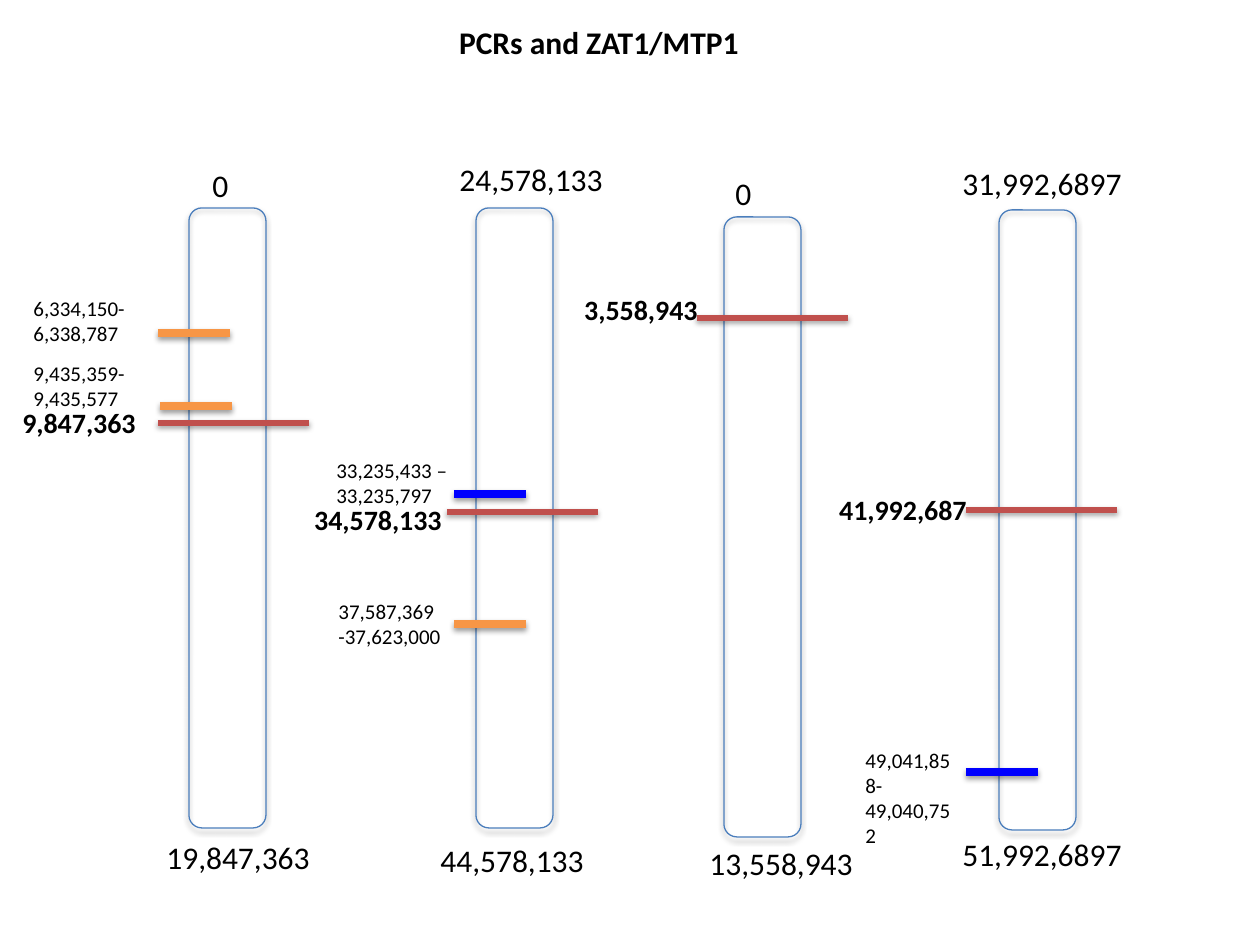
from lxml import etree
from pptx import Presentation
from pptx import util as u
from pptx.dml.color import RGBColor
from pptx.enum import shapes, text
from pptx.oxml import ns

COLORS = {
    "ink": "000000",
    "outline": "4B7EBC",
    "centre": "C0504D",
    "orange": "F79646",
    "blue": "0000FF",
}
EMU_PER_PX = 914400 / 126
BAR_WIDTH, BAR_HEIGHT = 77, 620
CENTRE_LENGTH, GENE_LENGTH = 151, 72

# Each label is (text, left, top, width); each mark is (left, y).
CHROMOSOMES = [
    {
        "bar": (189, 208),
        "ends": [("0", 200, 160, 145), ("19,847,363", 154, 832, 171)],
        "centre": (158, 423),
        "centre_label": ("9,847,363", 0, 399, 158),
        "genes": [
            ("orange", (158, 333), ("6,334,150-6,338,787", 21, 289, 147)),
            ("orange", (160, 406), ("9,435,359-9,435,577", 21, 354, 168)),
        ],
    },
    {
        "bar": (476, 208),
        "ends": [("24,578,133", 447, 154, 183), ("44,578,133", 428, 835, 183)],
        "centre": (447, 512),
        "centre_label": ("34,578,133", 290, 496, 176),
        "genes": [
            ("blue", (454, 494), ("33,235,433 – 33,235,797", 324, 451, 147)),
            ("orange", (454, 624), ("37,587,369 -37,623,000", 326, 592, 147)),
        ],
    },
    {
        "bar": (724, 217),
        "ends": [("0", 723, 168, 183), ("13,558,943", 697, 838, 183)],
        "centre": (697, 318),
        "centre_label": ("3,558,943", 553, 286, 176),
        "genes": [],
    },
    {
        "bar": (999, 210),
        "ends": [("31,992,6897", 950, 158, 215), ("51,992,6897", 950, 829, 215)],
        "centre": (966, 510),
        "centre_label": ("41,992,687", 815, 486, 176),
        "genes": [
            ("blue", (966, 772), ("49,041,858-49,040,752", 853, 741, 113)),
        ],
    },
]


def px(*lengths):
    return [u.Emu(round(length * EMU_PER_PX)) for length in lengths]


class Painter:
    font = "Calibri"

    def __init__(self, page):
        self.page = page

    def paint_line(self, line, color, points):
        line.color.rgb = RGBColor.from_string(COLORS[color])
        line.width = u.Pt(points)

    def add_shadow(self, shape, distance, opacity):
        """Give the shape a soft shadow straight below; distance in points."""
        effects = etree.SubElement(shape._element.spPr, ns.qn("a:effectLst"))
        shadow = etree.SubElement(
            effects, ns.qn("a:outerShdw"), blurRad=str(u.Pt(3.1)),
            dist=str(u.Pt(distance)), dir="5400000", rotWithShape="0")
        tint = etree.SubElement(shadow, ns.qn("a:srgbClr"), val=COLORS["ink"])
        etree.SubElement(tint, ns.qn("a:alpha"), val=str(opacity * 1000))

    def bar(self, left, top):
        bar = self.page.shapes.add_shape(
            shapes.MSO_SHAPE.ROUNDED_RECTANGLE,
            *px(left, top, BAR_WIDTH, BAR_HEIGHT))
        bar.fill.background()
        self.paint_line(bar.line, "outline", 0.75)
        self.add_shadow(bar, 1.8, 35)

    def mark(self, left, y, length, color, points):
        mark = self.page.shapes.add_connector(
            shapes.MSO_CONNECTOR.STRAIGHT, *px(left, y, left + length, y))
        self.paint_line(mark.line, color, points)
        self.add_shadow(mark, 1.6, 38)

    def label(self, words, left, top, width, height=50, size=18,
              bold=False, centred=False, anchor=text.MSO_ANCHOR.TOP):
        box = self.page.shapes.add_textbox(*px(left, top, width, height))
        frame = box.text_frame
        frame.word_wrap = True
        frame.vertical_anchor = anchor
        para = frame.paragraphs[0]
        para.alignment = text.PP_ALIGN.CENTER if centred else text.PP_ALIGN.LEFT
        span = para.add_run()
        span.text = words
        span.font.name = self.font
        span.font.size = u.Pt(size)
        span.font.bold = bold
        span.font.color.rgb = RGBColor.from_string(COLORS["ink"])

    def chromosome(self, bar, ends, centre, centre_label, genes):
        self.bar(*bar)
        for end in ends:
            self.label(*end)
        self.mark(*centre, CENTRE_LENGTH, "centre", 3)
        self.label(*centre_label, height=46, size=16, bold=True, centred=True)
        for color, place, gene_label in genes:
            self.mark(*place, GENE_LENGTH, color, 4.5)
            self.label(*gene_label, height=63, size=12)


def main():
    deck = Presentation()
    deck.slide_width, deck.slide_height = px(1260, 945)
    painter = Painter(deck.slides.add_slide(deck.slide_layouts[6]))
    painter.label("PCRs and ZAT1/MTP1", 32, 0, 1134, 83, bold=True,
                  centred=True, anchor=text.MSO_ANCHOR.MIDDLE)
    for chromosome in CHROMOSOMES:
        painter.chromosome(**chromosome)
    deck.save("out.pptx")


if __name__ == "__main__":
    main()
